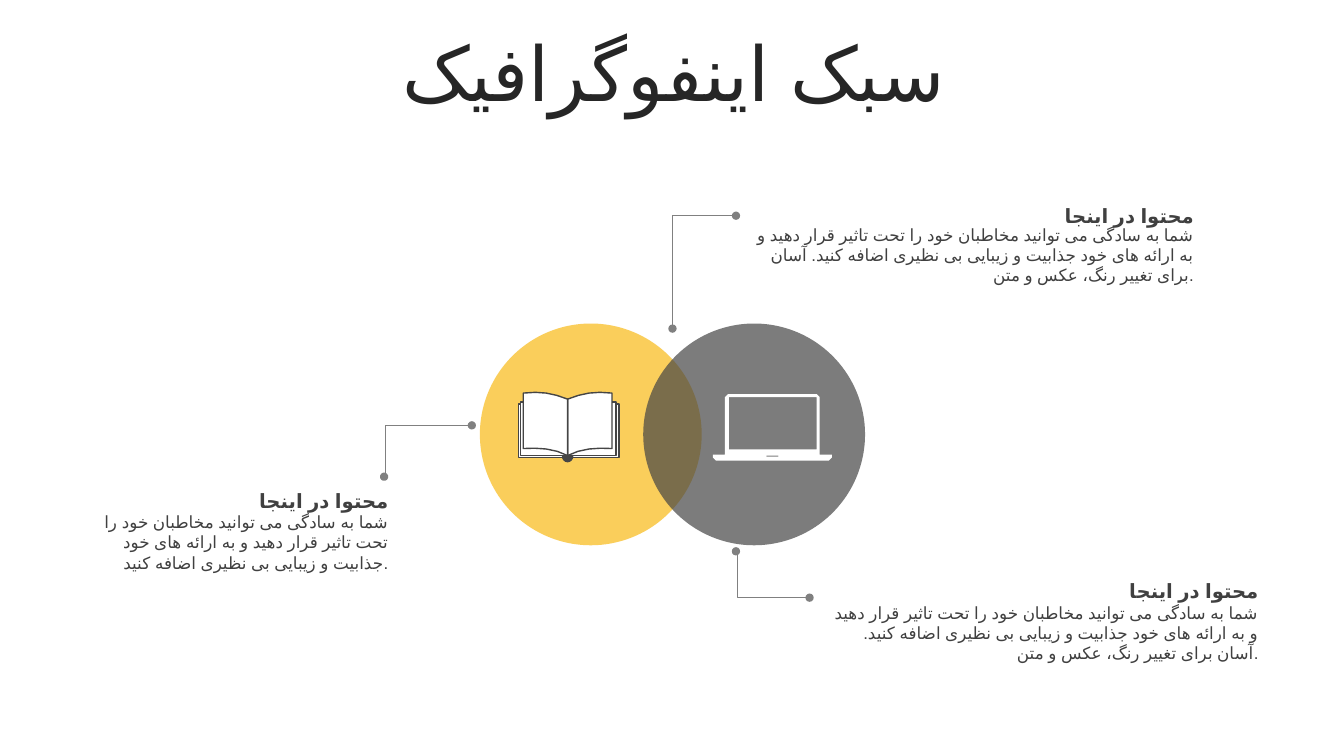
from lxml import etree
from pptx import Presentation
from pptx.dml.color import RGBColor
from pptx.enum.lang import MSO_LANGUAGE_ID
from pptx.enum.shapes import MSO_CONNECTOR, MSO_SHAPE
from pptx.enum.text import MSO_ANCHOR, MSO_AUTO_SIZE, PP_ALIGN
from pptx.oxml.ns import qn
from pptx.util import Inches, Pt

ELBOW = MSO_CONNECTOR.ELBOW
OVAL, RECTANGLE = MSO_SHAPE.OVAL, MSO_SHAPE.RECTANGLE
MIDDLE, TOP = MSO_ANCHOR.MIDDLE, MSO_ANCHOR.TOP
NO_FIT, GROW = MSO_AUTO_SIZE.NONE, MSO_AUTO_SIZE.SHAPE_TO_FIT_TEXT
CENTER, RIGHT = PP_ALIGN.CENTER, PP_ALIGN.RIGHT
PERSIAN = MSO_LANGUAGE_ID.FARSI

FONT = "Arial"
COLORS = {
    "title": "262626",
    "text": "404040",
    "yellow": "F8BA16",
    "dark": "454545",
    "line": "808080",
    "white": "FFFFFF",
}
CURVE_STEPS = 4

HEADING = "محتوا در اینجا"
SHORT_BODY = (
    "شما به سادگی می توانید مخاطبان خود را تحت تاثیر قرار دهید و به ارائه های خود "
    "جذابیت و زیبایی بی نظیری اضافه کنید."
)
LONG_BODY = SHORT_BODY + " آسان برای تغییر رنگ، عکس و متن."
CALLOUTS = [
    ((7.41, 1.97, 4.53), 0.21, LONG_BODY),
    ((8.07, 5.69, 4.51), 0.24, LONG_BODY),
    ((0.89, 4.8, 3.06), 0.23, SHORT_BODY),
]
LEADERS = [
    ((6.67, 3.26), (7.3, 2.14), 0),
    ((3.81, 4.73), (4.68, 4.22), 0.01),
    ((8.03, 5.93), (7.3, 5.47), 0.98),
]


def color(name):
    """Return a named colour."""
    return RGBColor.from_string(COLORS[name])


def paint(shape, fill, outline=None):
    """Give a shape a flat fill and an optional one-point outline."""
    shape.shadow.inherit = False
    shape.fill.solid()
    shape.fill.fore_color.rgb = color(fill)
    if outline:
        shape.line.color.rgb = color(outline)
        shape.line.width = Pt(1)
    else:
        shape.line.fill.background()


def add_text(slide, box, text, size, color_name, align, anchor=TOP, fit=GROW, bold=False):
    """Add a one-paragraph text box and return its paragraph."""
    frame = slide.shapes.add_textbox(*map(Inches, box)).text_frame
    frame.word_wrap = True
    frame.auto_size = fit
    frame.vertical_anchor = anchor
    frame.text = text
    paragraph = frame.paragraphs[0]
    paragraph.alignment = align
    font = paragraph.runs[0].font
    font.name, font.size, font.bold = FONT, Pt(size), bold
    font.language_id = PERSIAN
    font.color.rgb = color(color_name)
    properties = paragraph.runs[0]._r.get_or_add_rPr()
    script_font = etree.SubElement(properties, qn("a:cs"))
    for key, value in (("typeface", FONT), ("pitchFamily", "34"), ("charset", "0")):
        script_font.set(key, value)
    return paragraph


def add_title(slide, box):
    """Add the slide title."""
    paragraph = add_text(slide, box, "سبک اینفوگرافیک", 54, "title", CENTER, MIDDLE, NO_FIT)
    paragraph.line_spacing = 0.9
    paragraph.space_before = Pt(10)


def add_callout(slide, box, body_offset, body):
    """Add a bold heading with its description below."""
    left, top, width = box
    add_text(slide, (left, top, width, 0.34), HEADING, 14, "text", RIGHT, bold=True)
    add_text(slide, (left, top + body_offset, width, 0.5), body, 12, "text", RIGHT)


def add_leader(slide, start, end, bend):
    """Add a bent leader line with a dot at each end."""
    connector = slide.shapes.add_connector(ELBOW, *map(Inches, start + end))
    connector.line.color.rgb = color("line")
    connector.line.width = Pt(0.5)
    properties = connector._element.spPr
    guide = etree.SubElement(properties.find(qn("a:prstGeom")).get_or_add_avLst(), qn("a:gd"))
    guide.set("name", "adj1")
    guide.set("fmla", f"val {round(bend * 100000)}")
    line = properties.find(qn("a:ln"))
    for tag in ("a:headEnd", "a:tailEnd"):
        etree.SubElement(line, qn(tag)).set("type", "oval")
    etree.SubElement(properties, qn("a:effectLst"))


def add_circles(slide, box):
    """Add two overlapping translucent circles that fill the box."""
    left, top, width, diameter = box
    for x, fill in ((left, "yellow"), (left + width - diameter, "dark")):
        circle = slide.shapes.add_shape(OVAL, *map(Inches, (x, top, diameter, diameter)))
        paint(circle, fill)
        tint = circle._element.spPr.find(qn("a:solidFill"))[0]
        etree.SubElement(tint, qn("a:alpha")).set("val", "70000")


def flatten(contour):
    """Turn points and six-number cubic curves into a list of points."""
    points = []
    for step in contour:
        if len(step) == 2:
            points.append(step)
            continue
        nodes = [points[-1], step[:2], step[2:4], step[4:]]
        for index in range(1, CURVE_STEPS + 1):
            t = index / CURVE_STEPS
            weights = ((1 - t) ** 3, 3 * t * (1 - t) ** 2, 3 * t * t * (1 - t), t**3)
            points.append(tuple(sum(w * n[axis] for w, n in zip(weights, nodes)) for axis in (0, 1)))
    return points


def add_outline(slide, origin, contours, fill, outline=None, mirror=1):
    """Add a freeform from contours measured from the origin."""
    builder = None
    for contour in contours:
        points = [
            (Inches(origin[0] + mirror * x), Inches(origin[1] + y)) for x, y in flatten(contour)
        ]
        if builder is None:
            builder = slide.shapes.build_freeform(*points[0], scale=1.0)
        else:
            builder.move_to(*points[0])
        builder.add_line_segments(points[1:], close=True)
    paint(builder.convert_to_shape(), fill, outline)


def add_book(slide, box):
    """Add an open book with mirrored pages around its spine."""
    left, top, width = box
    covers = [(left, top + 0.11, width, 0.53), (left + 0.02, top + 0.09, width - 0.05, 0.53)]
    for cover in covers:
        paint(slide.shapes.add_shape(RECTANGLE, *map(Inches, cover)), "white", "dark")
    spine = (left + 0.49, top)
    page = [
        (0, 0.06),
        (0.15, 0, 0.27, -0.02, 0.44, 0),
        (0.44, 0.55),
        (0.29, 0.54, 0.13, 0.55, 0, 0.62),
    ]
    for mirror in (1, -1):
        add_outline(slide, spine, [page], "white", "dark", mirror)
    knob = [
        (-0.05, 0.63),
        (0.05, 0.63),
        (0.05, 0.65, 0.03, 0.68, 0, 0.68),
        (-0.03, 0.68, -0.05, 0.65, -0.05, 0.63),
    ]
    add_outline(slide, spine, [knob], "dark", "dark")


def add_laptop(slide, origin):
    """Add a laptop with a cut-out screen and touchpad notch."""
    body = [
        (0.15, 0), (1.03, 0), (1.06, 0.03), (1.06, 0.6), (1.18, 0.6), (1.18, 0.63),
        (1.15, 0.66), (0.03, 0.66), (0, 0.63), (0, 0.6), (0.12, 0.6), (0.12, 0.03),
    ]
    screen = [(0.16, 0.03), (0.16, 0.55), (1.03, 0.55), (1.03, 0.03)]
    notch = [(0.53, 0.61), (0.53, 0.62), (0.65, 0.62), (0.65, 0.61)]
    add_outline(slide, origin, [body, screen, notch], "white")


def main():
    """Build and save the infographic slide."""
    presentation = Presentation()
    presentation.slide_width, presentation.slide_height = Inches(13.33), Inches(7.5)
    slide = presentation.slides.add_slide(presentation.slide_layouts[6])
    add_title(slide, (0.35, 0.37, 12.66, 0.79))
    add_circles(slide, (4.76, 3.21, 3.82, 2.2))
    for callout in CALLOUTS:
        add_callout(slide, *callout)
    for leader in LEADERS:
        add_leader(slide, *leader)
    add_book(slide, (5.14, 3.9, 1))
    add_laptop(slide, (7.07, 3.91))
    presentation.save("out.pptx")


if __name__ == "__main__":
    main()
